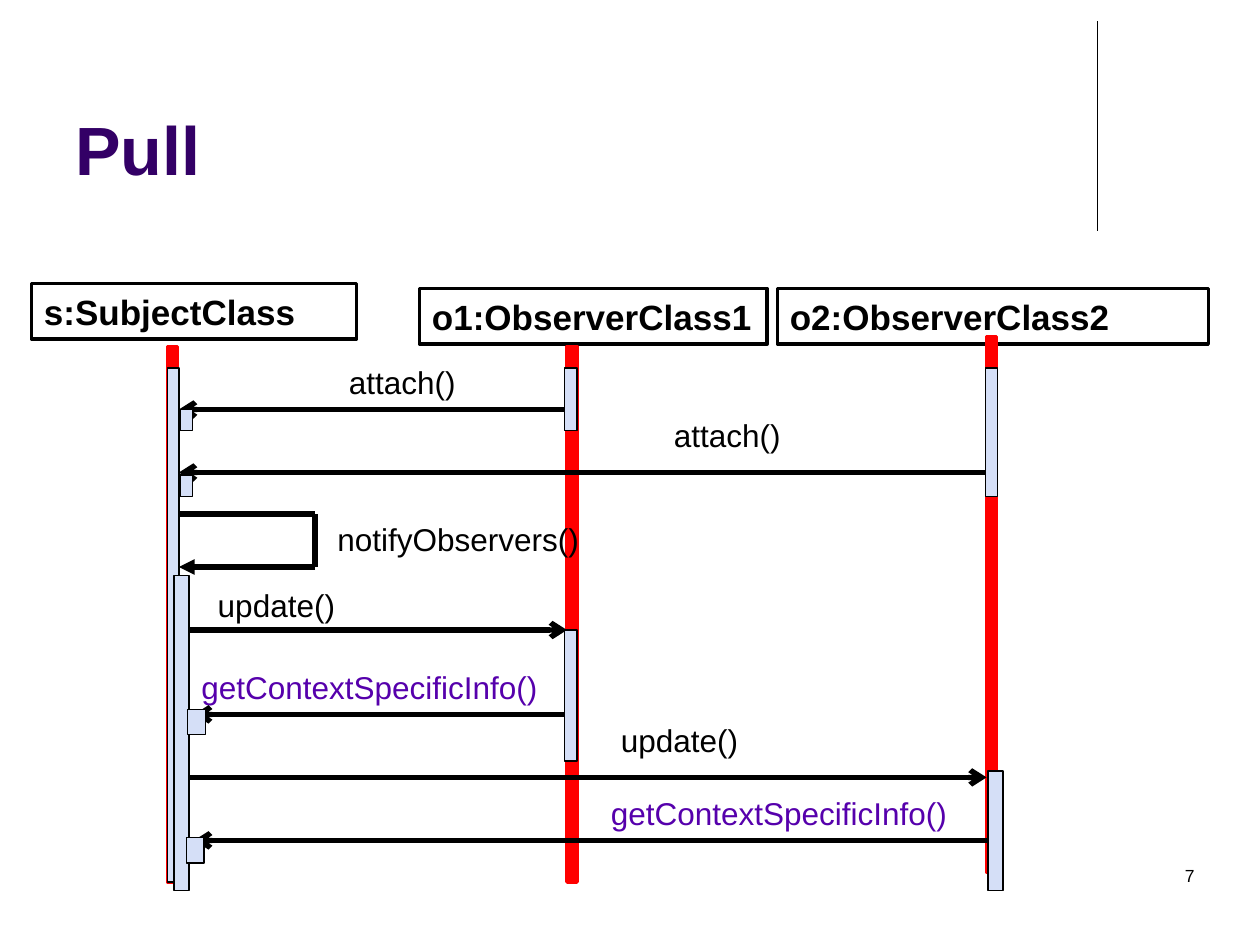
"""Build a slide with the sequence diagram of the pull observer."""
from lxml.etree import SubElement
from pptx import Presentation
from pptx.dml.color import RGBColor
from pptx.enum.shapes import MSO_CONNECTOR, MSO_SHAPE
from pptx.enum.text import MSO_ANCHOR, PP_ALIGN
from pptx.oxml.ns import qn
from pptx.util import Inches, Pt


def color(code):
    return RGBColor.from_string(code)


def write(shape, text, size, code="000000", bold=False, wrap=False):
    frame = shape.text_frame
    frame.word_wrap = wrap
    para = frame.paragraphs[0]
    para.alignment = PP_ALIGN.LEFT
    run = para.add_run()
    run.text = text
    run.font.name = "Arial"
    run.font.size = Pt(size)
    run.font.bold = bold
    run.font.color.rgb = color(code)
    return frame


deck = Presentation()
deck.slide_width, deck.slide_height = Inches(10), Inches(7.5)
slide = deck.slides.add_slide(deck.slide_layouts[6])
shapes = slide.shapes

title = shapes.add_textbox(Inches(0.5), Inches(0.13), Inches(8.25), Inches(1.42))
frame = write(title, "Pull", 39, "330066", True, True)
frame.vertical_anchor = MSO_ANCHOR.BOTTOM

number = shapes.add_textbox(Inches(7.25), Inches(6.82), Inches(2.33), Inches(0.5))
frame = write(number, "7", 10, wrap=True)
frame.paragraphs[0].alignment = PP_ALIGN.RIGHT

heads = [
    ("s:SubjectClass", 0.25, 2.25, 2.58),
    ("o1:ObserverClass1", 3.33, 2.29, 2.76),
    ("o2:ObserverClass2", 6.17, 2.29, 3.42),
]
for text, left, top, width in heads:
    head = shapes.add_shape(
        MSO_SHAPE.RECTANGLE, Inches(left), Inches(top), Inches(width), Inches(0.44))
    head.shadow.inherit = False
    head.fill.background()
    head.line.color.rgb = color("000000")
    head.line.width = Pt(2)
    frame = write(head, text, 20, bold=True, wrap=text != "o1:ObserverClass1")
    frame.vertical_anchor = MSO_ANCHOR.MIDDLE

lifes = [(1.33, 2.75), (4.5, 2.75), (7.83, 2.67)]
for left, top in lifes:
    life = shapes.add_shape(
        MSO_SHAPE.RECTANGLE, Inches(left), Inches(top), Inches(0.08), Inches(4.25))
    life.shadow.inherit = False
    life.fill.solid()
    life.fill.fore_color.rgb = color("FF0000")
    life.line.color.rgb = color("FF0000")
    life.line.width = Pt(2)

labels = [
    ("attach()", 2.67, 2.83, 1.06, "000000"),
    ("attach()", 5.25, 3.25, 1.06, "000000"),
    ("notifyObservers()", 2.58, 4.08, 2.14, "000000"),
    ("update()", 1.63, 4.6, 1.14, "000000"),
    ("getContextSpecificInfo()", 1.5, 5.25, 2.89, "5600AC"),
    ("update()", 4.83, 5.67, 1.14, "000000"),
    ("getContextSpecificInfo()", 4.75, 6.25, 2.89, "5600AC"),
]
for text, left, top, width, code in labels:
    label = shapes.add_textbox(Inches(left), Inches(top), Inches(width), Inches(0.4))
    write(label, text, 18, code)

lines = [
    (8.71, 0.17, 8.71, 1.83, 0.75, None),
    (1.42, 4.08, 2.5, 4.08, 3, None),
    (2.5, 4.08, 2.5, 4.5, 3, None),
    (2.5, 4.5, 1.42, 4.5, 3, "triangle"),
    (4.5, 3.25, 1.42, 3.25, 3, "arrow"),
    (7.83, 3.75, 1.42, 3.75, 3, "arrow"),
    (1.42, 5, 4.5, 5, 3, "arrow"),
    (4.5, 5.67, 1.54, 5.67, 3, "arrow"),
    (1.42, 6.17, 7.83, 6.17, 3, "arrow"),
    (7.83, 6.67, 1.54, 6.67, 3, "arrow"),
]
for x1, y1, x2, y2, width, tip in lines:
    line = shapes.add_connector(
        MSO_CONNECTOR.STRAIGHT, Inches(x1), Inches(y1), Inches(x2), Inches(y2))
    line.line.color.rgb = color("000000")
    line.line.width = Pt(width)
    if tip:
        SubElement(line.line._get_or_add_ln(), qn("a:tailEnd"), type=tip)
    SubElement(line._element.spPr, qn("a:effectLst"))

bars = [
    (1.33, 2.92, 0.09, 4.08),
    (4.48, 2.92, 0.1, 0.5),
    (1.43, 3.25, 0.1, 0.17),
    (1.38, 4.57, 0.12, 2.5),
    (4.48, 5, 0.1, 1.04),
    (7.84, 6.12, 0.12, 0.95),
    (1.49, 5.63, 0.14, 0.2),
    (1.48, 6.65, 0.14, 0.2),
    (1.43, 3.77, 0.1, 0.17),
    (7.82, 2.92, 0.1, 1.02),
]
for left, top, width, height in bars:
    bar = shapes.add_shape(
        MSO_SHAPE.RECTANGLE, Inches(left), Inches(top), Inches(width), Inches(height))
    bar.shadow.inherit = False
    bar.fill.solid()
    bar.fill.fore_color.rgb = color("D5DFF7")
    bar.line.color.rgb = color("000000")
    bar.line.width = Pt(0.75)

deck.save("out.pptx")
